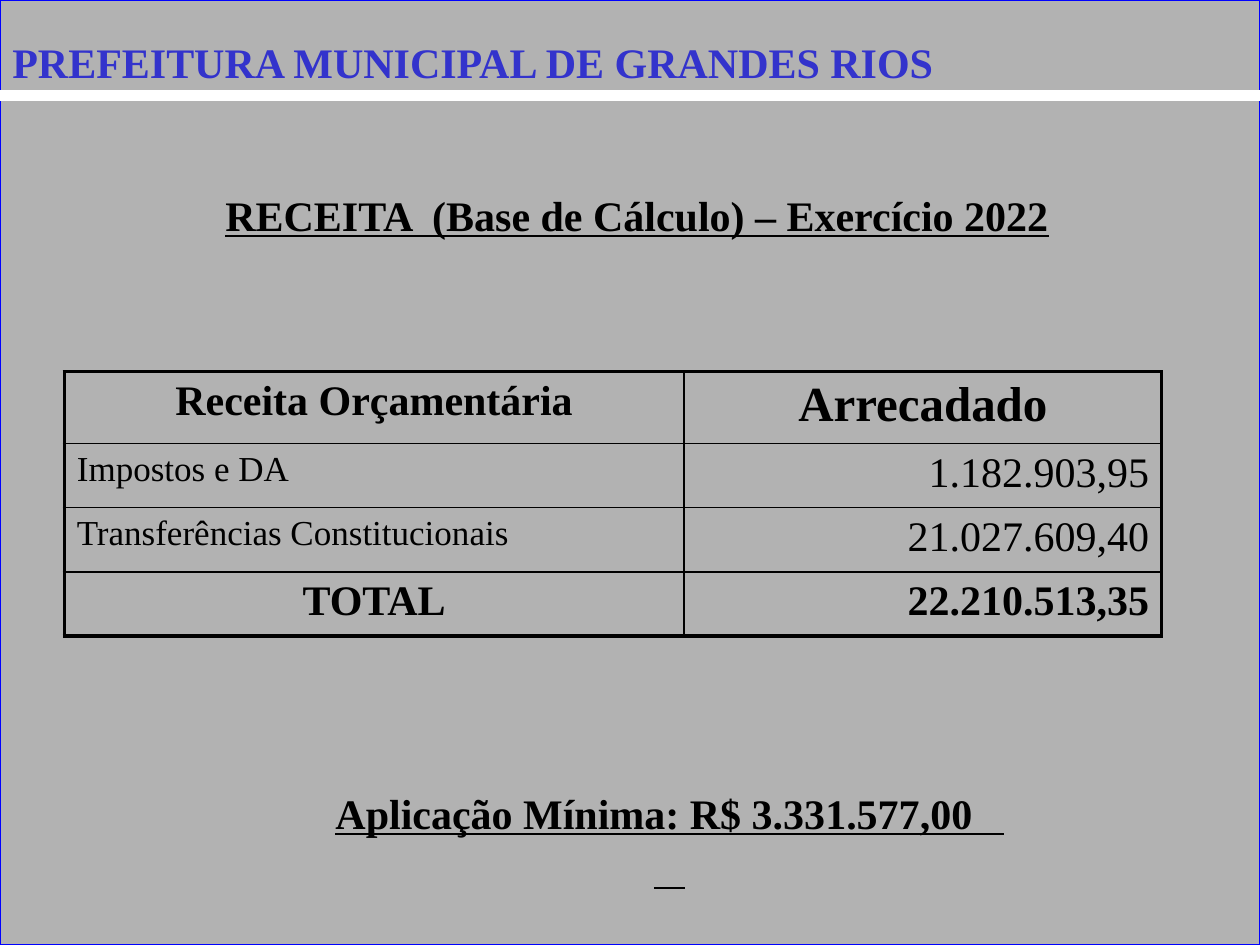
from lxml import etree
from pptx import Presentation
from pptx.dml.color import RGBColor
from pptx.enum.shapes import MSO_CONNECTOR, MSO_SHAPE
from pptx.enum.text import MSO_ANCHOR, PP_ALIGN
from pptx.oxml.ns import qn
from pptx.util import Inches, Pt

LEFT, CENTER, RIGHT = PP_ALIGN.LEFT, PP_ALIGN.CENTER, PP_ALIGN.RIGHT
TOP, BOTTOM = MSO_ANCHOR.TOP, MSO_ANCHOR.BOTTOM
RECTANGLE, STRAIGHT = MSO_SHAPE.RECTANGLE, MSO_CONNECTOR.STRAIGHT

FONT = "Times New Roman"
GRAY = RGBColor(0xB2, 0xB2, 0xB2)
WHITE = RGBColor(0xFF, 0xFF, 0xFF)
BLACK = RGBColor(0, 0, 0)
BLUE = RGBColor(0, 0, 0xFF)
TITLE_BLUE = RGBColor(0x33, 0x33, 0xCC)

THIN, THICK = 1, 2.25
COLUMN_WIDTHS = (4.92, 3.79)
ROW_HEIGHTS = (0.57, 0.51, 0.51, 0.51)
# Each cell: text, size, bold, alignment
REVENUE = (
    (("Receita Orçamentária", 24, True, CENTER), ("Arrecadado", 28, True, CENTER)),
    (("Impostos e DA", 20, False, LEFT), ("1.182.903,95", 24, False, RIGHT)),
    (("Transferências Constitucionais", 20, False, LEFT),
     ("21.027.609,40", 24, False, RIGHT)),
    (("TOTAL", 24, True, CENTER), ("22.210.513,35", 24, True, RIGHT)),
)


def write(tf, text, size=24, bold=True, align=LEFT, color=BLACK):
    p = tf.paragraphs[0]
    p.text = text
    p.alignment = align
    p.font.name = FONT
    p.font.size = Pt(size)
    p.font.bold = bold
    p.font.color.rgb = color
    return p


def add_text(slide, box, text, underline=False, anchor=TOP, **style):
    tf = slide.shapes.add_textbox(*map(Inches, box)).text_frame
    tf.word_wrap = True
    tf.vertical_anchor = anchor
    p = write(tf, text, **style)
    p.line_spacing = 1.07
    p.font.underline = underline
    return tf


def add_text_shadow(run):
    effects = etree.SubElement(run.font._element, qn("a:effectLst"))
    shadow = etree.SubElement(effects, qn("a:outerShdw"),
                              dist="35921", dir="2700000", algn="ctr")
    etree.SubElement(shadow, qn("a:srgbClr"), val="808080")


def add_background(slide):
    sp = slide.shapes.add_shape(RECTANGLE, 0, 0, Inches(10), Inches(7.5))
    sp.shadow.inherit = False
    sp.fill.solid()
    sp.fill.fore_color.rgb = GRAY
    sp.line.color.rgb = BLUE
    sp.line.width = Pt(0.75)


def add_rule(slide, y):
    line = slide.shapes.add_connector(STRAIGHT, 0, Inches(y), Inches(10), Inches(y))
    line.line.color.rgb = WHITE
    line.line.width = Pt(6)
    etree.SubElement(line._element.spPr, qn("a:effectLst"))


def set_border(cell, side, width):
    ln = etree.SubElement(cell._tc.get_or_add_tcPr(), qn(f"a:ln{side}"),
                          w=str(Pt(width)))
    fill = etree.SubElement(ln, qn("a:solidFill"))
    etree.SubElement(fill, qn("a:srgbClr"), val=str(BLACK))


def add_revenue_table(slide, left, top):
    last_row, last_col = len(REVENUE) - 1, len(COLUMN_WIDTHS) - 1
    table = slide.shapes.add_table(
        len(REVENUE), len(COLUMN_WIDTHS), Inches(left), Inches(top),
        Inches(sum(COLUMN_WIDTHS)), Inches(sum(ROW_HEIGHTS))).table
    for column, width in zip(table.columns, COLUMN_WIDTHS):
        column.width = Inches(width)
    for row, height in zip(table.rows, ROW_HEIGHTS):
        row.height = Inches(height)
    for i, values in enumerate(REVENUE):
        for j, (text, size, bold, align) in enumerate(values):
            cell = table.cell(i, j)
            write(cell.text_frame, text, size, bold, align)
            # Thick outer frame, thin inner grid
            outer = {"L": j == 0, "R": j == last_col, "T": i == 0, "B": i == last_row}
            for side, is_outer in outer.items():
                set_border(cell, side, THICK if is_outer else THIN)
            cell.fill.background()


def main():
    prs = Presentation()
    prs.slide_width, prs.slide_height = Inches(10), Inches(7.5)
    slide = prs.slides.add_slide(prs.slide_layouts[6])

    # Background and header rule
    add_background(slide)
    add_rule(slide, 0.76)

    # Section heading
    tf = add_text(slide, (0.98, 0.87, 8.15, 1.11),
                  "RECEITA  (Base de Cálculo) – Exercício 2022",
                  underline=True, anchor=BOTTOM, align=CENTER)
    tf.margin_bottom = Inches(0.08)

    # Revenue table
    add_revenue_table(slide, 0.51, 2.95)

    # Page title
    tf = add_text(slide, (0, 0.21, 8.23, 0.5),
                  "PREFEITURA MUNICIPAL DE GRANDES RIOS", color=TITLE_BLUE)
    add_text_shadow(tf.paragraphs[0].runs[0])

    # Minimum application; the underline runs on past the amount
    add_text(slide, (2.56, 6.17, 5.51, 0.5),
             "Aplicação Mínima: R$ 3.331.577,00       ",
             underline=True, align=CENTER)

    prs.save("out.pptx")


if __name__ == "__main__":
    main()
